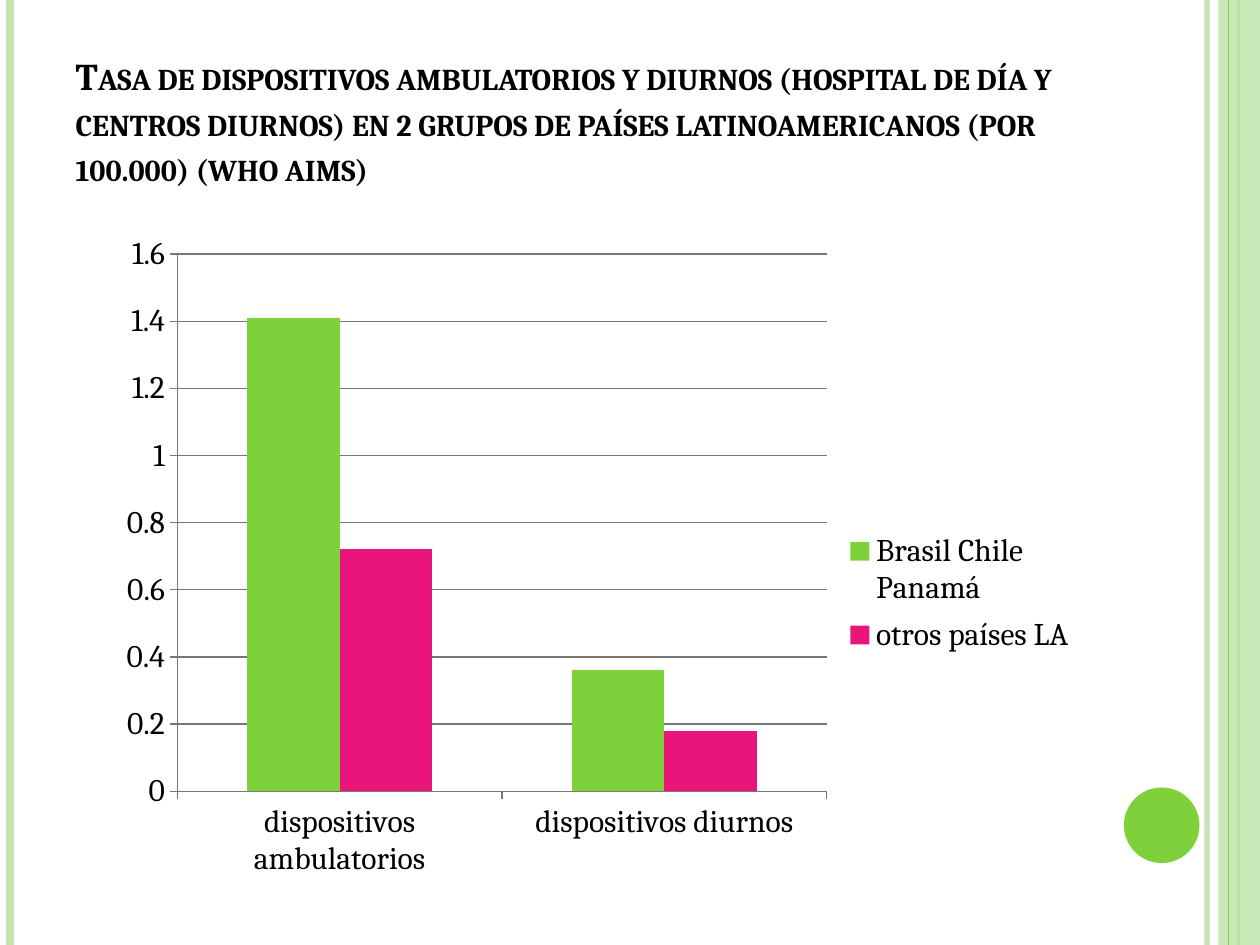
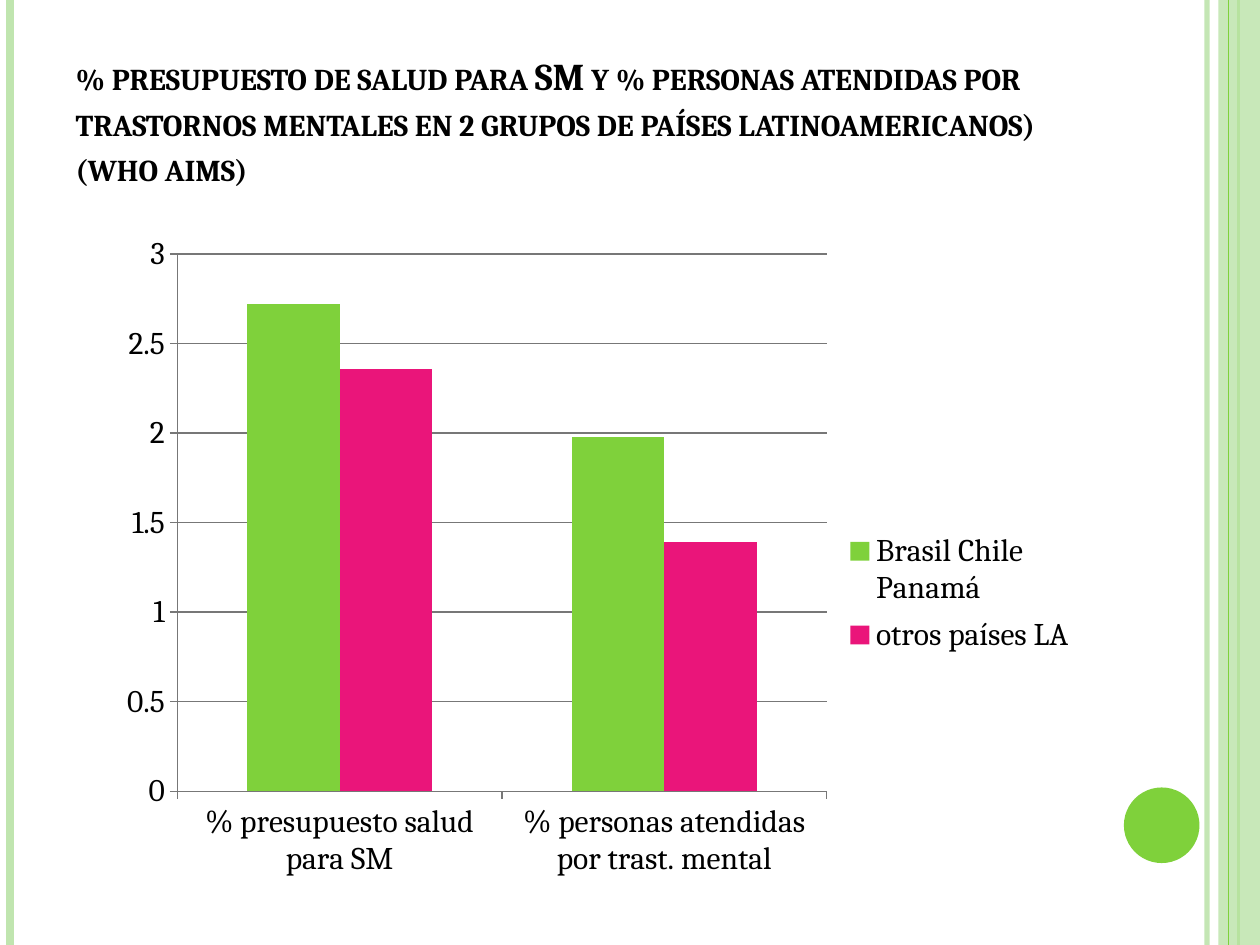
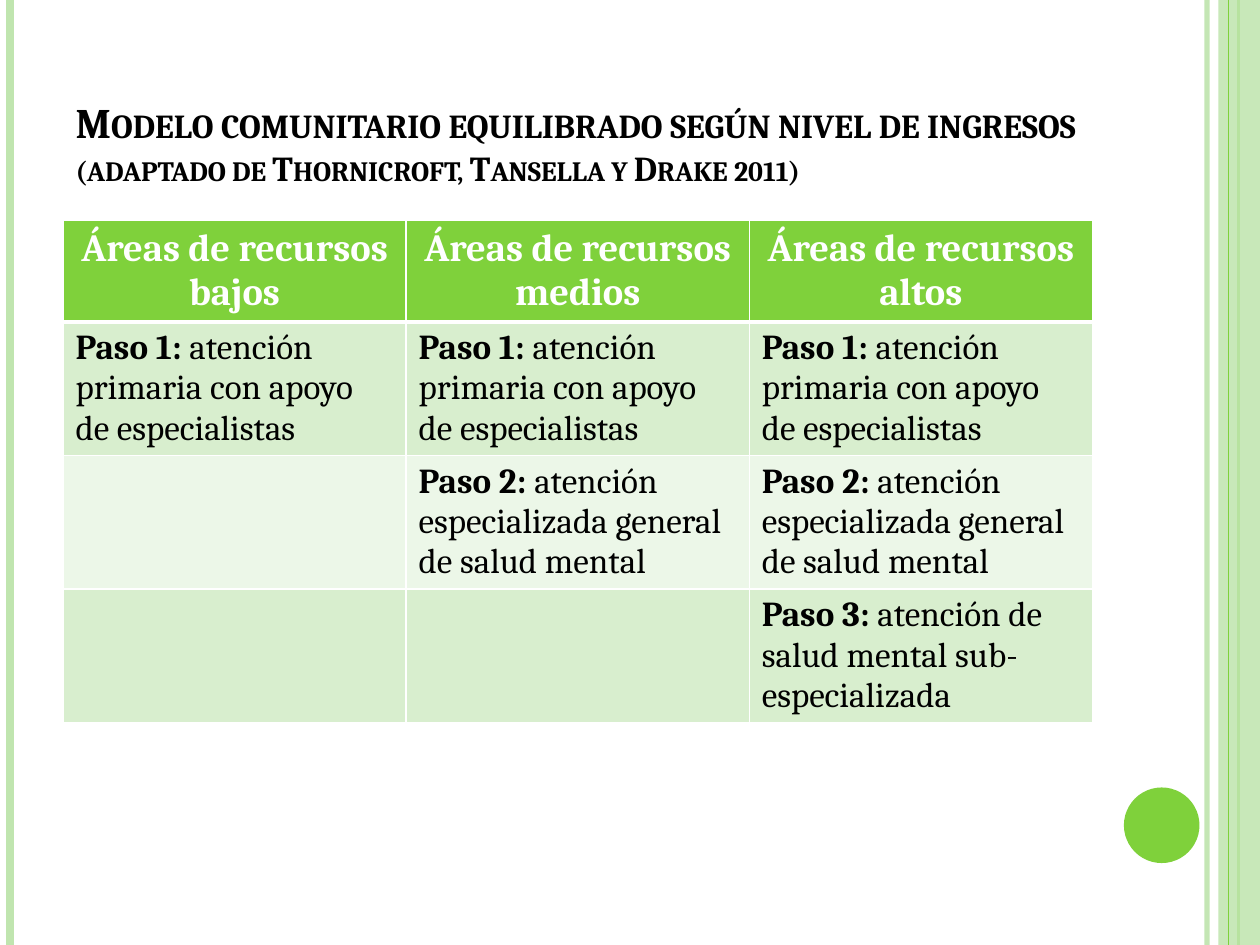
import pptx
import pptx.chart.data
import pptx.dml.color
import pptx.enum.chart
import pptx.enum.shapes
import pptx.enum.text
import pptx.util
from lxml import etree
from pptx.oxml.ns import qn
from pptx.util import Inches

FONT = "Cambria"
GREEN, PALE, PINK = "7FD13B", "C0E5AF", "EA157A"
BLACK, WHITE, GREY, SLATE = "000000", "FFFFFF", "777777", "4E5B6F"
BANDS = ("D8EECE", "ECF7E8")


def color(code):
    return pptx.dml.color.RGBColor.from_string(code)


def write(para, text, size=20, bold=False, ink=BLACK, small=False):
    """Add one formatted run to a paragraph."""
    run = para.add_run()
    run.text = text
    style(run.font, size, bold, ink)
    if small:
        run._r.get_or_add_rPr().set("cap", "small")


def style(font, size, bold=False, ink=BLACK):
    font.name = FONT
    font.size = pptx.util.Pt(size)
    font.bold = bold
    font.color.rgb = color(ink)


def fade(shape, alpha):
    """Set the opacity, in percent, of every colour in the shape."""
    for tint in shape._element.spPr.iter(qn("a:srgbClr")):
        etree.SubElement(tint, qn("a:alpha"), val=str(alpha * 1000))


def edge(cell, side, width):
    line = etree.SubElement(cell._tc.get_or_add_tcPr(), qn("a:ln" + side),
                            w=str(pptx.util.Pt(width)))
    fill = etree.SubElement(line, qn("a:solidFill"))
    etree.SubElement(fill, qn("a:srgbClr"), val=WHITE)


def place(part, index, box, inner=False):
    """Fix a chart part at box, given as fractions of the chart."""
    old = part.find(qn("c:layout"))
    if old is not None:
        part.remove(old)
    layout = etree.Element(qn("c:layout"))
    manual = etree.SubElement(layout, qn("c:manualLayout"))
    if inner:
        etree.SubElement(manual, qn("c:layoutTarget"), val="inner")
    for key in ("xMode", "yMode"):
        etree.SubElement(manual, qn("c:" + key), val="edge")
    for key, val in zip("xywh", box):
        etree.SubElement(manual, qn("c:" + key), val=str(val))
    part.insert(index, layout)


class Deck:
    def __init__(self):
        self.prs = pptx.Presentation()
        self.prs.slide_width, self.prs.slide_height = Inches(10), Inches(7.5)
        self.slide = None

    def start(self, *runs, width=8.48):
        """Open a slide with its side bands and title."""
        self.slide = self.prs.slides.add_slide(self.prs.slide_layouts[5])
        self.slide.background.fill.solid()
        self.slide.background.fill.fore_color.rgb = color(WHITE)
        self.bands()
        self.title(runs, width)

    def bands(self):
        kind = pptx.enum.shapes.MSO_SHAPE
        self.rule(9.58, PALE, 3, 93)
        self.rule(0.08, PALE, 4.5)
        self.rule(9.83, GREEN, 1.5)
        fade(self.shape(kind.RECTANGLE, 9.67, 0, 0.33, 7.5, PALE), 87)
        self.rule(9.75, GREEN, 0.75)
        self.shape(kind.OVAL, 8.92, 6.25, 0.6, 0.6, GREEN)

    def rule(self, x, ink, width, alpha=100):
        """Draw a full-height vertical line."""
        line = self.slide.shapes.add_connector(
            pptx.enum.shapes.MSO_CONNECTOR.STRAIGHT,
            Inches(x), Inches(0), Inches(x), Inches(7.5))
        line.line.color.rgb = color(ink)
        line.line.width = pptx.util.Pt(width)
        etree.SubElement(line._element.spPr, qn("a:effectLst"))
        if alpha < 100:
            fade(line, alpha)

    def shape(self, kind, x, y, w, h, ink):
        shape = self.slide.shapes.add_shape(
            kind, Inches(x), Inches(y), Inches(w), Inches(h))
        shape.shadow.inherit = False
        shape.fill.solid()
        shape.fill.fore_color.rgb = color(ink)
        shape.line.fill.background()
        return shape

    def title(self, runs, width):
        box = self.slide.shapes.title
        box.left, box.top = Inches(0.5), Inches(0.3)
        box.width, box.height = Inches(width), Inches(1.25)
        frame = box.text_frame
        frame.word_wrap = True
        frame.auto_size = pptx.enum.text.MSO_AUTO_SIZE.NONE
        frame.vertical_anchor = pptx.enum.text.MSO_ANCHOR.BOTTOM
        para = frame.paragraphs[0]
        para.alignment = pptx.enum.text.PP_ALIGN.LEFT
        for text, size, ink in runs:
            write(para, text, size=size, bold=True, ink=ink, small=True)

    def chart(self, cats, rows, top, step):
        enum = pptx.enum.chart
        data = pptx.chart.data.CategoryChartData()
        data.categories = cats
        for name, vals, ink in rows:
            data.add_series(name, vals)
        chart = self.slide.shapes.add_chart(
            enum.XL_CHART_TYPE.COLUMN_CLUSTERED, Inches(0.86), Inches(1.75),
            Inches(7.81), Inches(5.33), data).chart
        style(chart.font, 18)
        chart.has_title = False

        # Columns
        plot = chart.plots[0]
        plot.vary_by_categories = False
        plot.gap_width, plot.overlap = 150, 0
        for series, row in zip(plot.series, rows):
            series.format.fill.solid()
            series.format.fill.fore_color.rgb = color(row[2])

        # Axes
        scale = chart.value_axis
        scale.minimum_scale, scale.maximum_scale = 0, top
        scale.major_unit = step
        scale.has_major_gridlines = True
        for axis in (scale, chart.category_axis):
            axis.major_tick_mark = enum.XL_TICK_MARK.OUTSIDE
        for part in (scale, chart.category_axis, scale.major_gridlines):
            part.format.line.color.rgb = color(GREY)
            part.format.line.width = pptx.util.Pt(0.75)

        # Legend and layout
        chart.has_legend = True
        chart.legend.position = enum.XL_LEGEND_POSITION.RIGHT
        chart.legend.include_in_layout = False
        place(chart._chartSpace.chart.plotArea, 0, (0.07, 0.05, 0.66, 0.8), True)
        place(chart.legend._element, 1, (0.74, 0.45, 0.25, 0.21))

    def table(self, heads, rows):
        """Rows hold (bold lead, text) pairs, or None for an empty cell."""
        frame = self.slide.shapes.add_table(
            len(rows) + 1, len(heads), Inches(0.5), Inches(1.75),
            Inches(8.17), Inches(4.83))
        grid = frame.table
        grid.horz_banding = False
        for row in grid.rows:
            row.height = Inches(0.41)
        frame.height = Inches(4.83)
        for col, head in enumerate(heads):
            para = self.cell(grid, 0, col, GREEN)
            para.alignment = pptx.enum.text.PP_ALIGN.CENTER
            write(para, head, size=22, bold=True, ink=WHITE)
        for num, row in enumerate(rows, 1):
            for col, item in enumerate(row):
                para = self.cell(grid, num, col, BANDS[(num - 1) % 2])
                if item:
                    write(para, item[0] + " ", bold=True)
                    write(para, item[1])

    def cell(self, grid, row, col, ink):
        cell = grid.cell(row, col)
        for side in "LRTB":
            thick = (row, side) in ((0, "B"), (1, "T"))
            edge(cell, side, 3 if thick else 1)
        cell.fill.solid()
        cell.fill.fore_color.rgb = color(ink)
        return cell.text_frame.paragraphs[0]


def main():
    deck = Deck()
    groups = (("Brasil Chile Panamá", GREEN), ("otros países LA", PINK))

    # Chart slides: title, categories, values by group, axis top and step
    charts = (
        ("Tasa de dispositivos ambulatorios y diurnos (hospital de día y "
         "centros diurnos) en 2 grupos de países latinoamericanos "
         "(por 100.000) (who aims)",
         ("dispositivos ambulatorios", "dispositivos diurnos"),
         ((1.41, 0.36), (0.72, 0.18)), 1.6, 0.2),
        ("% presupuesto de salud para SM y % personas atendidas por "
         "trastornos mentales en 2 grupos de países latinoamericanos) "
         "(who aims)",
         ("% presupuesto salud para SM",
          "% personas atendidas por trast. mental"),
         ((2.72, 1.98), (2.36, 1.39)), 3, 0.5),
    )
    for text, cats, vals, top, step in charts:
        deck.start((text, 21.6, BLACK))
        rows = [(name, val, ink) for (name, ink), val in zip(groups, vals)]
        deck.chart(cats, rows, top, step)

    # Care model: each richer area adds one step
    deck.start(
        ("Modelo comunitario equilibrado según nivel de ingresos", 24, BLACK),
        (" ", 20, SLATE),
        ("(adaptado de Thornicroft, Tansella y Drake 2011)", 20, BLACK),
        width=8.17)
    heads = ["Áreas de recursos " + level
             for level in ("bajos", "medios", "altos")]
    steps = ("atención primaria con apoyo de especialistas",
             "atención especializada general de salud mental",
             "atención de salud mental sub-especializada")
    deck.table(heads, [
        [(f"Paso {num + 1}:", text) if col >= num else None
         for col in range(len(heads))]
        for num, text in enumerate(steps)])

    deck.prs.save("out.pptx")


if __name__ == "__main__":
    main()
